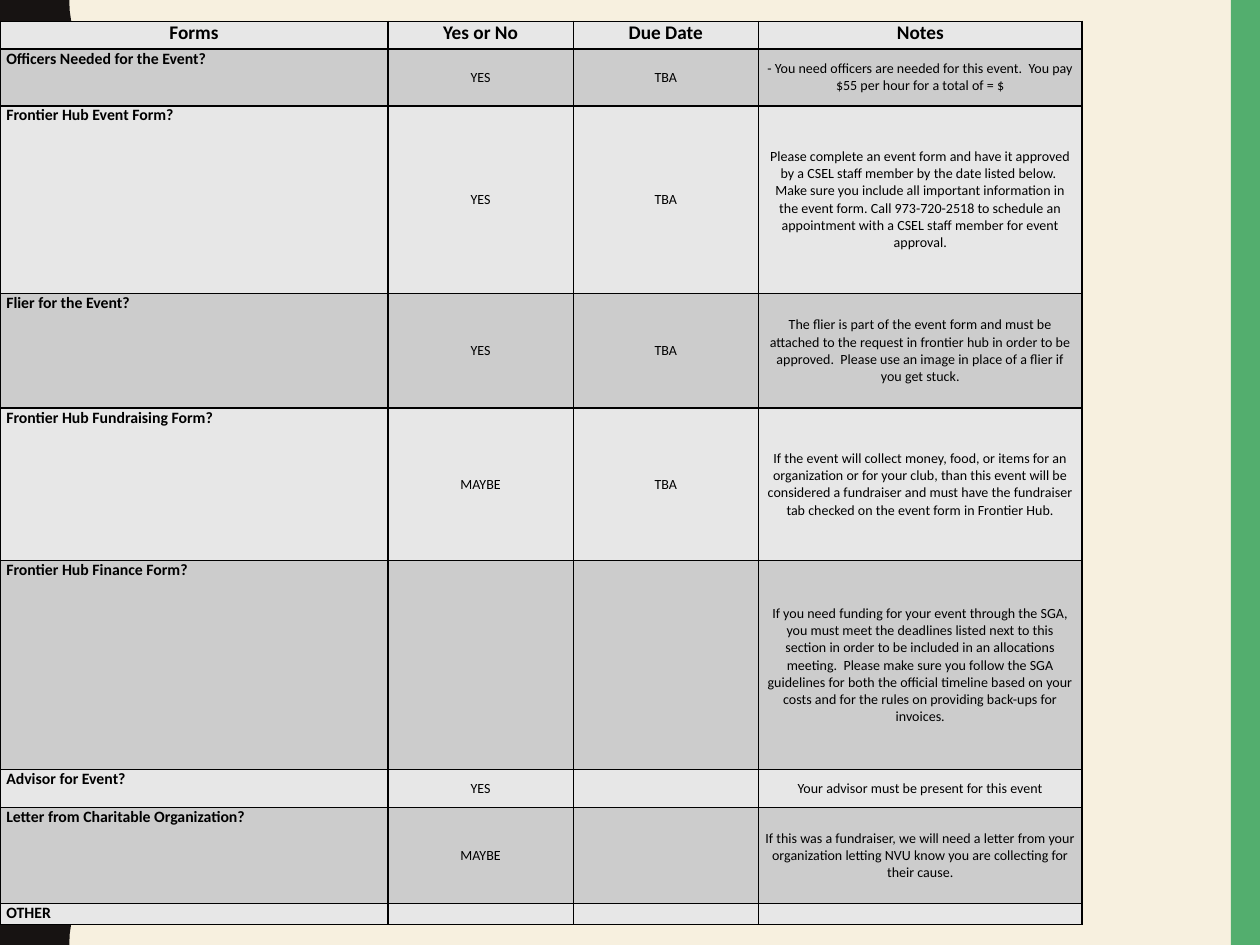
from lxml import etree
from pptx import Presentation
from pptx.dml.color import RGBColor
from pptx.enum.shapes import MSO_SHAPE
from pptx.enum.text import MSO_ANCHOR, PP_ALIGN
from pptx.oxml.ns import qn
from pptx.util import Inches, Pt

RECTANGLE = MSO_SHAPE.RECTANGLE
LEFT, CENTER = PP_ALIGN.LEFT, PP_ALIGN.CENTER
TOP, MIDDLE = MSO_ANCHOR.TOP, MSO_ANCHOR.MIDDLE

CREAM = RGBColor(0xF7, 0xF0, 0xDF)
GREEN = RGBColor(0x53, 0xAE, 0x6E)
DARK = RGBColor(0x17, 0x13, 0x12)
BLACK = RGBColor(0, 0, 0)
LIGHT_GRAY = RGBColor(0xE7, 0xE7, 0xE7)
MID_GRAY = RGBColor(0xCC, 0xCC, 0xCC)

COLUMN_WIDTHS = [3.08, 1.47, 1.47, 2.57]
ROW_HEIGHTS = [0.22, 0.45, 1.49, 0.91, 1.21, 1.66, 0.3, 0.76, 0.17]
CHECKLIST = [
    ("Forms", "Yes or No", "Due Date", "Notes"),
    ("Officers Needed for the Event?", "YES", "TBA",
     "- You need officers are needed for this event.  You pay $55 per hour "
     "for a total of = $"),
    ("Frontier Hub Event Form?", "YES", "TBA",
     "Please complete an event form and have it approved by a CSEL staff member "
     "by the date listed below.  Make sure you include all important information "
     "in the event form. Call 973-720-2518 to schedule an appointment with a "
     "CSEL staff member for event approval."),
    ("Flier for the Event?", "YES", "TBA",
     "The flier is part of the event form and must be attached to the request in "
     "frontier hub in order to be approved.  Please use an image in place of a "
     "flier if you get stuck."),
    ("Frontier Hub Fundraising Form?", "MAYBE", "TBA",
     "If the event will collect money, food, or items for an organization or for "
     "your club, than this event will be considered a fundraiser and must have "
     "the fundraiser tab checked on the event form in Frontier Hub."),
    ("Frontier Hub Finance Form?", "", "",
     "If you need funding for your event through the SGA, you must meet the "
     "deadlines listed next to this section in order to be included in an "
     "allocations meeting.  Please make sure you follow the SGA guidelines for "
     "both the official timeline based on your costs and for the rules on "
     "providing back-ups for invoices."),
    ("Advisor for Event?", "YES", "", "Your advisor must be present for this event"),
    ("Letter from Charitable Organization?", "MAYBE", "",
     "If this was a fundraiser, we will need a letter from your organization "
     "letting NVU know you are collecting for their cause."),
    ("OTHER", "", "", ""),
]


class SlideBuilder:
    font = "Calibri"
    header_size, label_size, body_size = Pt(11), Pt(9), Pt(8)
    border_width = Pt(1)

    def __init__(self, slide):
        self.slide = slide

    def background(self, color):
        fill = self.slide.background.fill
        fill.solid()
        fill.fore_color.rgb = color

    def paint(self, shape, color):
        shape.fill.solid()
        shape.fill.fore_color.rgb = color
        shape.line.fill.background()
        shape.shadow.inherit = False

    def band(self, left, top, width, height, color):
        shapes = self.slide.shapes
        self.paint(shapes.add_shape(RECTANGLE, Inches(left), Inches(top),
                                    Inches(width), Inches(height)), color)

    def wavy_band(self, inner, outer, height, half_waves, color, steps=12):
        """Left band whose right edge swings smoothly between inner and outer."""
        half = height / half_waves
        edge = []
        for wave in range(half_waves):
            start, end = (inner, outer) if wave % 2 == 0 else (outer, inner)
            for step in range(1, steps + 1):
                t = step / steps
                x = start + (end - start) * t * t * (3 - 2 * t)
                y = half * (wave + 1.5 * t * (1 - t) + t ** 3)
                edge.append((Inches(x), Inches(y)))
        outline = self.slide.shapes.build_freeform(0, 0)
        outline.add_line_segments(
            [(Inches(inner), 0), *edge, (0, Inches(height))], close=True)
        self.paint(outline.convert_to_shape(), color)

    def borders(self, cell):
        properties = cell._tc.get_or_add_tcPr()
        for side in ("a:lnL", "a:lnR", "a:lnT", "a:lnB"):
            line = etree.SubElement(properties, qn(side), w=str(self.border_width))
            solid = etree.SubElement(line, qn("a:solidFill"))
            etree.SubElement(solid, qn("a:srgbClr"), val=str(BLACK))

    def cell(self, cell, text, size, bold, align, anchor, color):
        self.borders(cell)
        cell.fill.solid()
        cell.fill.fore_color.rgb = color
        cell.margin_left = cell.margin_right = Inches(0.05)
        cell.margin_top = cell.margin_bottom = 0
        cell.vertical_anchor = anchor
        paragraph = cell.text_frame.paragraphs[0]
        paragraph.alignment = align
        if not text:
            # Keeps an empty cell from stretching its row
            paragraph._p.get_or_add_endParaRPr().set("sz", str(int(size.pt * 100)))
            return
        paragraph.text = text
        font = paragraph.runs[0].font
        font.name, font.size, font.bold = self.font, size, bold
        font.color.rgb = BLACK

    def table(self, left, top, widths, heights, rows):
        table = self.slide.shapes.add_table(
            len(rows), len(widths), Inches(left), Inches(top),
            Inches(sum(widths)), Inches(sum(heights))).table
        for column, width in zip(table.columns, widths):
            column.width = Inches(width)
        for r, (height, texts) in enumerate(zip(heights, rows)):
            table.rows[r].height = Inches(height)
            color = MID_GRAY if r % 2 else LIGHT_GRAY
            for c, text in enumerate(texts):
                if r == 0:
                    style = self.header_size, True, CENTER, TOP
                elif c == 0:
                    style = self.label_size, True, LEFT, TOP
                else:
                    style = self.body_size, False, CENTER, MIDDLE
                self.cell(table.cell(r, c), text, *style, color)


def main():
    presentation = Presentation()
    presentation.slide_width, presentation.slide_height = Inches(10), Inches(7.5)
    blank_layout = presentation.slide_layouts[6]
    builder = SlideBuilder(presentation.slides.add_slide(blank_layout))

    # Backdrop: cream page, green right band, dark wavy left band
    builder.background(CREAM)
    builder.band(9.77, 0, 0.23, 7.5, GREEN)
    builder.wavy_band(0.55, 0.74, 7.5, 10, DARK)

    # Event form checklist
    builder.table(0, 0.17, COLUMN_WIDTHS, ROW_HEIGHTS, CHECKLIST)

    presentation.save("out.pptx")


if __name__ == "__main__":
    main()
